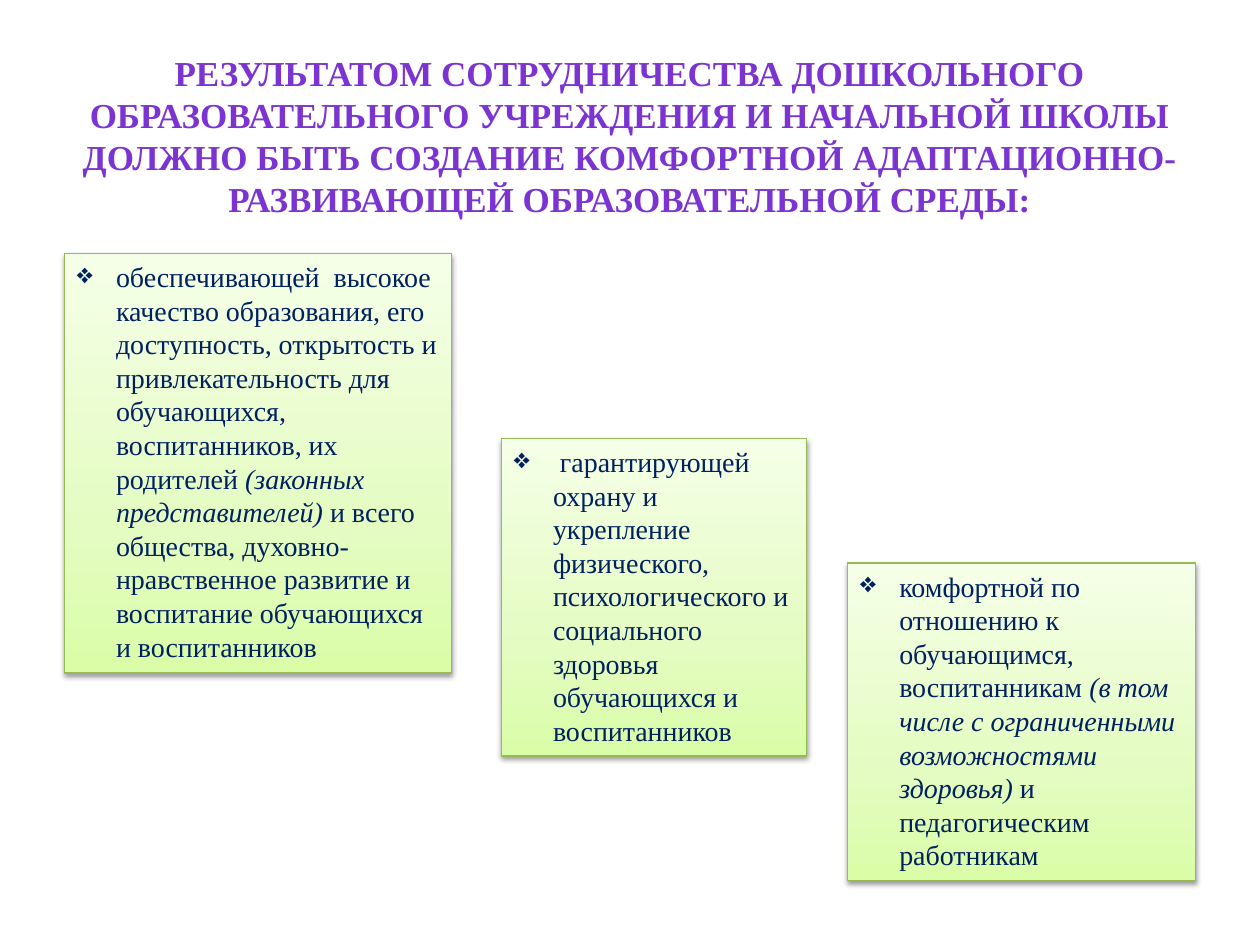
from lxml import etree
from pptx import Presentation
from pptx.dml.color import RGBColor
from pptx.enum import shapes, text
from pptx.oxml.ns import qn
from pptx.util import Cm, Pt

FONT = "Times New Roman"
PURPLE, NAVY, GREEN = "7B34D2", "002060", "98B955"
CARD_STOPS = [(0, "DAFDA7"), (35, "E4FCC2"), (100, "F5FFE7")]

TITLE = ("РЕЗУЛЬТАТОМ СОТРУДНИЧЕСТВА ДОШКОЛЬНОГО ОБРАЗОВАТЕЛЬНОГО УЧРЕЖДЕНИЯ "
         "И НАЧАЛЬНОЙ ШКОЛЫ ДОЛЖНО БЫТЬ СОЗДАНИЕ КОМФОРТНОЙ "
         "АДАПТАЦИОННО-РАЗВИВАЮЩЕЙ ОБРАЗОВАТЕЛЬНОЙ СРЕДЫ:")

# Each card: box in cm (left, top, width, height), then (wording, italic) pieces
CARDS = [
    ((1.3, 5.11, 7.8, 8.46), [
        ("обеспечивающей  высокое качество образования, его доступность, "
         "открытость и привлекательность для обучающихся, воспитанников, "
         "их родителей ", False),
        ("(законных представителей)", True),
        (" и всего общества, духовно-нравственное развитие и воспитание "
         "обучающихся и воспитанников", False)]),
    ((10.11, 8.84, 6.15, 6.4), [
        (" гарантирующей охрану и укрепление физического, психологического "
         "и социального здоровья обучающихся и воспитанников", False)]),
    ((17.09, 11.35, 7.01, 6.4), [
        ("комфортной по отношению к обучающимся, воспитанникам ", False),
        ("(в том числе с ограниченными возможностями здоровья)", True),
        (" и педагогическим работникам", False)]),
]


def color(value):
    return RGBColor.from_string(value)


def add_node(parent, tag, **attributes):
    return etree.SubElement(parent, qn(tag),
                            {key: str(value) for key, value in attributes.items()})


def add_run(paragraph, wording, *, size, ink, bold=False, italic=False):
    run = paragraph.add_run()
    run.text = wording
    font = run.font
    font.name, font.size, font.bold, font.italic = FONT, Pt(size), bold, italic
    font.color.rgb = color(ink)


def add_bullet(paragraph, indent):
    properties = paragraph._p.get_or_add_pPr()
    properties.set("marL", str(indent))
    properties.set("indent", str(-indent))
    add_node(properties, "a:buChar", char="❖")


def fill_gradient(shape, stops):
    """Fill from bottom to top with (percent, colour) stops."""
    shape.fill.gradient()
    shape.fill.gradient_angle = 90
    stop_list = shape._element.spPr.find(qn("a:gradFill")).find(qn("a:gsLst"))
    for old_stop in list(stop_list):
        stop_list.remove(old_stop)
    for percent, value in stops:
        stop = add_node(stop_list, "a:gs", pos=percent * 1000)
        add_node(stop, "a:srgbClr", val=value)


def drop_shadow(shape):
    shape.shadow.inherit = False
    effects = shape._element.spPr.find(qn("a:effectLst"))
    shadow = add_node(effects, "a:outerShdw", blurRad=Pt(3.1), dist=Pt(1.6),
                      dir=90 * 60000, rotWithShape=0)
    add_node(add_node(shadow, "a:srgbClr", val="000000"), "a:alpha", val=38000)


def add_title(slide, box):
    frame = slide.shapes.add_textbox(*map(Cm, box)).text_frame
    frame.word_wrap = True
    heading = frame.paragraphs[0]
    heading.alignment = text.PP_ALIGN.CENTER
    add_run(heading, TITLE, size=20, ink=PURPLE, bold=True)


def add_card(slide, box, pieces):
    card = slide.shapes.add_shape(shapes.MSO_SHAPE.RECTANGLE, *map(Cm, box))
    fill_gradient(card, CARD_STOPS)
    card.line.color.rgb = color(GREEN)
    card.line.width = Pt(0.75)
    drop_shadow(card)
    frame = card.text_frame
    frame.word_wrap = True
    frame.vertical_anchor = text.MSO_ANCHOR.TOP
    item = frame.paragraphs[0]
    item.alignment = text.PP_ALIGN.LEFT
    add_bullet(item, Cm(0.79))
    for wording, italic in pieces:
        add_run(item, wording, size=16, ink=NAVY, italic=italic)


def main():
    deck = Presentation()
    deck.slide_width, deck.slide_height = Cm(25.4), Cm(19.05)
    slide = deck.slides.add_slide(deck.slide_layouts[6])
    add_title(slide, (0.89, 0.91, 23.6, 3.68))
    for box, pieces in CARDS:
        add_card(slide, box, pieces)
    deck.save("out.pptx")


if __name__ == "__main__":
    main()
